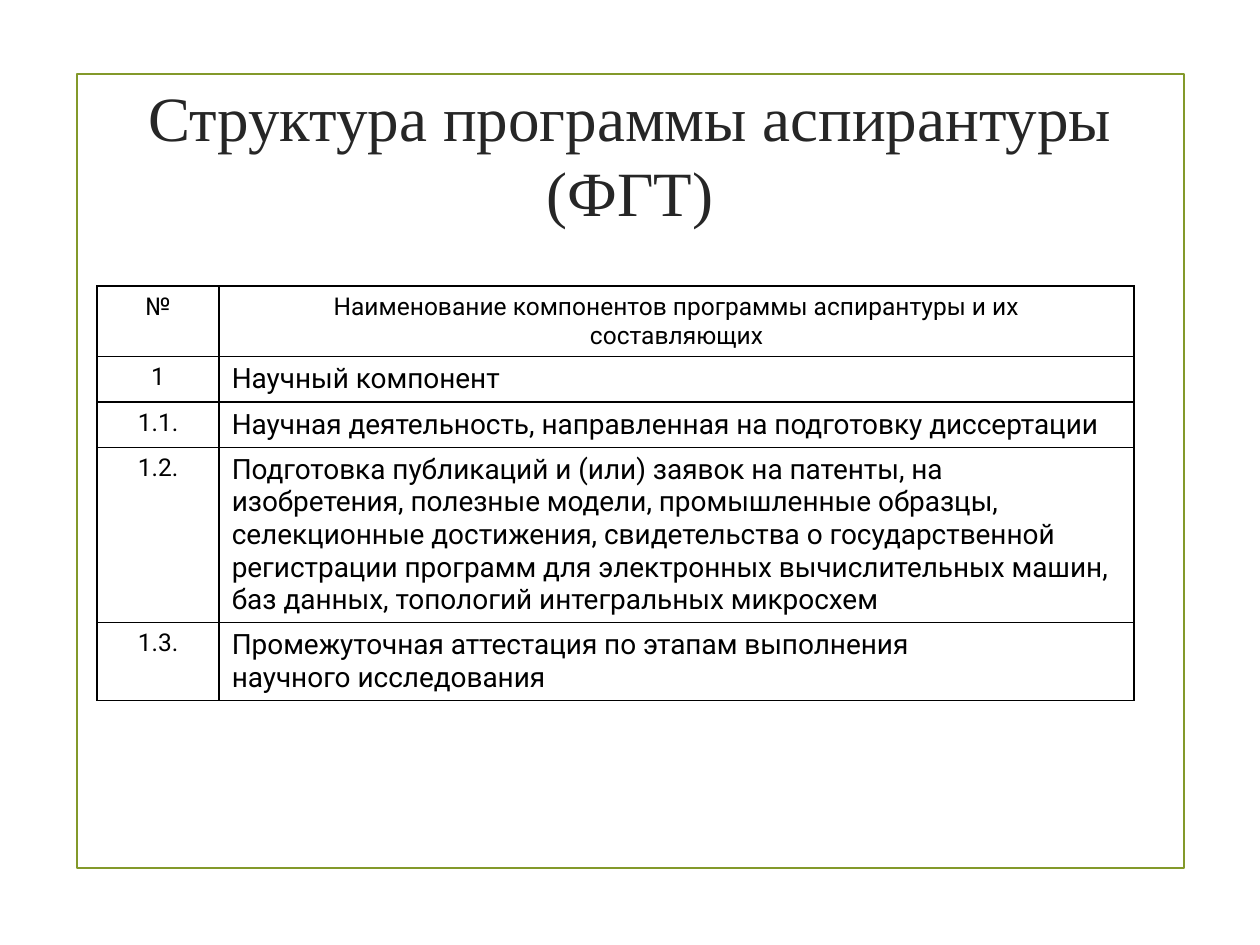
from lxml.etree import SubElement
from pptx import Presentation
from pptx.dml.color import RGBColor
from pptx.enum.shapes import MSO_SHAPE as Shape
from pptx.enum.text import MSO_ANCHOR as Anchor, PP_ALIGN as Align
from pptx.oxml.ns import qn
from pptx.util import Inches, Pt

ROWS = [
    ("№", ["Наименование компонентов программы аспирантуры и их", "составляющих"]),
    ("1", ["Научный компонент"]),
    ("1.1.", ["Научная деятельность, направленная на подготовку диссертации"]),
    ("1.2.", ["Подготовка публикаций и (или) заявок на патенты, на",
              "изобретения, полезные модели, промышленные образцы, "
              "селекционные достижения, свидетельства о государственной "
              "регистрации программ для электронных вычислительных машин, "
              "баз данных, топологий интегральных микросхем"]),
    ("1.3.", ["Промежуточная аттестация по этапам выполнения", "научного исследования"]),
]
COLUMN_WIDTHS = [0.97, 7.26]
ROW_HEIGHTS = [0.56, 0.36, 0.36, 1.39, 0.62]


def color(value):
    """Turn a hex string into a colour."""
    return RGBColor.from_string(value)


def style_paragraph(para, font, size, shade, align):
    """Set the font and alignment of one paragraph."""
    para.alignment = align
    para.font.name = font
    para.font.size = Pt(size)
    para.font.color.rgb = color(shade)


def add_border(cell, shade, width):
    """Draw a solid line on all four sides of a cell."""
    properties = cell._tc.get_or_add_tcPr()
    for index, side in enumerate(("a:lnL", "a:lnR", "a:lnT", "a:lnB")):
        line = SubElement(properties, qn(side), w=str(Pt(width)))
        fill = SubElement(line, qn("a:solidFill"))
        SubElement(fill, qn("a:srgbClr"), val=shade)
        properties.insert(index, line)


def add_frame(page, left, top, width, height):
    """Add the green outline around the slide content."""
    frame = page.shapes.add_shape(Shape.RECTANGLE, left, top, width, height)
    frame.shadow.inherit = False
    frame.fill.background()
    frame.line.color.rgb = color("83992A")
    frame.line.width = Pt(1.25)
    page.shapes._spTree.insert(2, frame._element)


def place_title(page, left, top, width, height):
    """Move, fill and format the title placeholder."""
    title = page.shapes.title
    title.left, title.top, title.width, title.height = left, top, width, height
    text = title.text_frame
    text.word_wrap = True
    text.vertical_anchor = Anchor.MIDDLE
    text.margin_left = text.margin_right = Inches(0.05)
    text.margin_top = text.margin_bottom = Inches(0.05)
    text.text = "Структура программы аспирантуры\v(ФГТ)"
    style_paragraph(text.paragraphs[0], "Times New Roman", 36, "262626", Align.CENTER)


def fill_cell(cell, lines, size, align):
    """Write the paragraphs of one cell and give it a border."""
    cell.text = "\n".join(lines)
    for para in cell.text_frame.paragraphs:
        style_paragraph(para, "Roboto", size, "000000", align)
    cell.fill.background()
    add_border(cell, "000000", 1)


def add_components_table(page, left, top, width, height):
    """Add the table of programme components."""
    frame = page.shapes.add_table(len(ROWS), len(COLUMN_WIDTHS), left, top, width, height)
    table = frame.table
    table.first_row = table.horz_banding = False
    for column, column_width in zip(table.columns, COLUMN_WIDTHS):
        column.width = Inches(column_width)
    for index, (number, lines) in enumerate(ROWS):
        table.rows[index].height = Inches(ROW_HEIGHTS[index])
        size, align = (16, Align.LEFT) if index else (14, Align.CENTER)
        fill_cell(table.cell(index, 0), [number], 14, Align.CENTER)
        fill_cell(table.cell(index, 1), lines, size, align)


def main():
    """Build the slide and save the deck."""
    deck = Presentation()
    deck.slide_width, deck.slide_height = Inches(10), Inches(7.5)
    page = deck.slides.add_slide(deck.slide_layouts[5])
    add_frame(page, Inches(0.61), Inches(0.59), Inches(8.79), Inches(6.3))
    place_title(page, Inches(0.5), Inches(0.69), Inches(9), Inches(1.06))
    add_components_table(page, Inches(0.77), Inches(2.27),
                         Inches(sum(COLUMN_WIDTHS)), Inches(sum(ROW_HEIGHTS)))
    deck.save("out.pptx")


if __name__ == "__main__":
    main()
